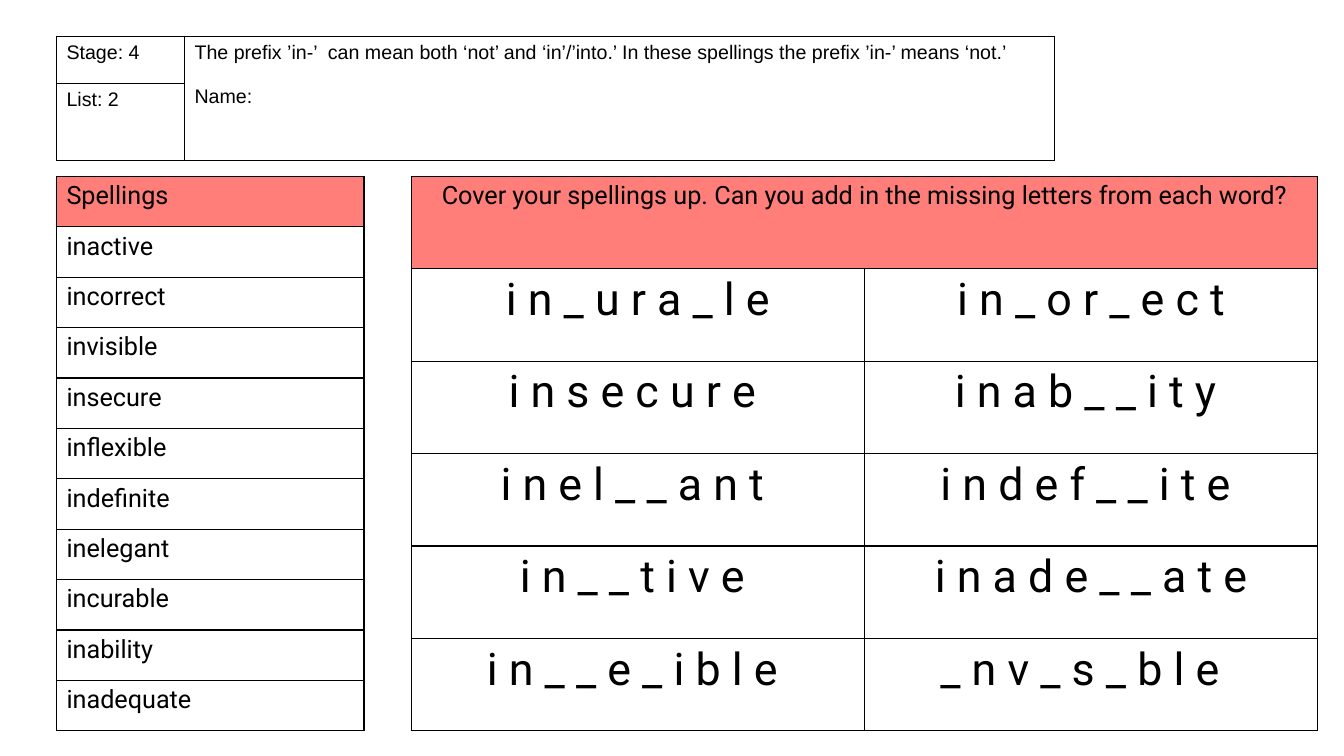
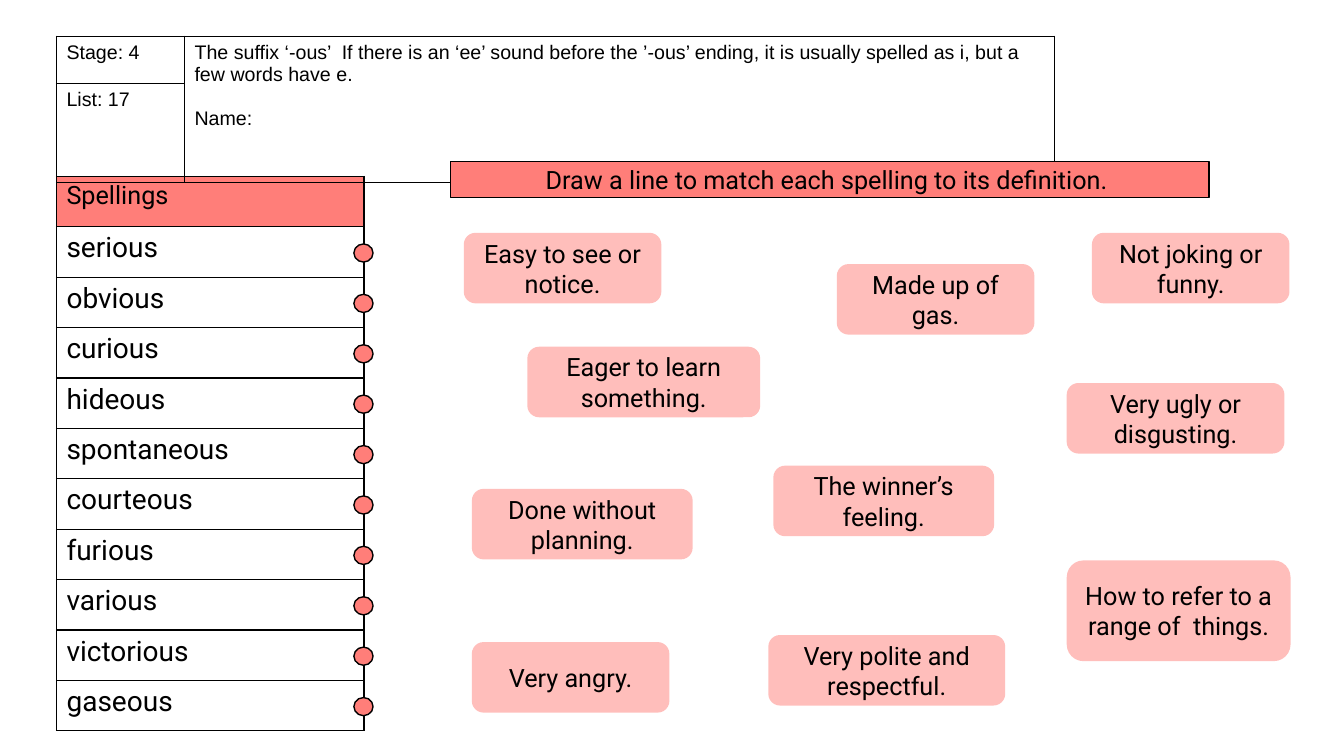
from dataclasses import dataclass
from lxml.etree import SubElement
from pptx import Presentation
from pptx.dml.color import RGBColor as RGB
from pptx.enum.shapes import MSO_SHAPE as Kind
from pptx.enum.text import MSO_ANCHOR as Anchor, PP_ALIGN as Align
from pptx.oxml import parse_xml
from pptx.oxml.ns import nsdecls, qn
from pptx.util import Inches, Pt


@dataclass(frozen=True)
class Theme:
    coral: RGB = RGB(0xFF, 0x7E, 0x79)
    ink: RGB = RGB(0, 0, 0)
    head: str = "Arial"
    body: str = "Roboto"
    small: int = 14
    text: int = 18
    word: int = 20
    large: int = 32
    line: int = 1


theme = Theme()
deck = Presentation()
deck.slide_width, deck.slide_height = Inches(13.33), Inches(7.5)
blank = deck.slide_layouts[6]

# Grid: 15 rows over the slide height, with square units
unit = deck.slide_height / 15
left, top = 1.12, 3.5


def write(frame, lines, size, font=theme.body, align=Align.CENTER):
    """Fill a frame with one paragraph a line, one empty line's height apart."""
    frame.word_wrap = True
    for i, line in enumerate(lines):
        para = frame.add_paragraph() if i else frame.paragraphs[0]
        para.alignment = align
        if i:
            para.space_before = Pt(size * 1.15)
        run = para.add_run()
        run.text = line
        run.font.name, run.font.size = font, Pt(size)
        run.font.color.rgb = theme.ink


def grid(slide, x, y, cols, rows):
    """Add an unfilled table with thin ink borders; sizes are in units."""
    frame = slide.shapes.add_table(len(rows), len(cols), *(
        round(n * unit) for n in (x, y, sum(cols), sum(rows))))
    table = frame.table
    table.first_row = table.horz_banding = False
    for col, width in zip(table.columns, cols):
        col.width = round(width * unit)
    for row, height in zip(table.rows, rows):
        row.height = round(height * unit)
    for cell in table.iter_cells():
        cell.fill.background()
        props = cell._tc.get_or_add_tcPr()
        for i, side in enumerate(("lnL", "lnR", "lnT", "lnB")):
            edge = parse_xml(f'<a:{side} {nsdecls("a")} w="{Pt(theme.line)}">'
                             f'<a:solidFill><a:srgbClr val="{theme.ink}"/>'
                             f'</a:solidFill></a:{side}>')
            props.insert(i, edge)
    return table


# Both slides: spelling list and header table
sheets = [
    ("List: 2", "The prefix ’in-’  can mean both ‘not’ and ‘in’/’into.’ "
     "In these spellings the prefix ’in-’ means ‘not.’", theme.text,
     ["inactive", "incorrect", "invisible", "insecure", "inflexible",
      "indefinite", "inelegant", "incurable", "inability", "inadequate"]),
    ("List: 17", "The suffix ‘-ous’  If there is an ‘ee’ sound before the "
     "’-ous’ ending, it is usually spelled as i, but a few words have e.",
     theme.word,
     ["serious", "obvious", "curious", "hideous", "spontaneous",
      "courteous", "furious", "various", "victorious", "gaseous"]),
]
slides = []
for number, rule, size, words in sheets:
    slide = deck.slides.add_slide(blank)
    slides.append(slide)

    table = grid(slide, left, top, [6.1], [1] * (len(words) + 1))
    for i, word in enumerate(["Spellings"] + words):
        write(table.cell(i, 0).text_frame, [word],
              size if i else theme.text, align=Align.LEFT)
    table.cell(0, 0).fill.solid()
    table.cell(0, 0).fill.fore_color.rgb = theme.coral

    table = grid(slide, left, 0.72, [2.54, 17.26], [0.94, 0.94])
    table.cell(0, 1).merge(table.cell(1, 1))
    for row, col, lines in ((0, 0, ["Stage: 4"]), (1, 0, [number]),
                            (0, 1, [rule, "Name:"])):
        write(table.cell(row, col).text_frame, lines, theme.small,
              theme.head, Align.LEFT)

gaps, match = slides

# Slide 1: words with missing letters
pairs = [
    ("i n _ u r a _ l e", "i n _ o r _ e c t"),
    ("i n s e c u r e ", "i n a b _ _ i t y "),
    ("i n e l _ _ a n t ", "i n d e f _ _ i t e "),
    ("i n _ _ t i v e ", "i n a d e _ _ a t e"),
    ("i n _ _ e _ i b l e ", "_ n v _ s _ b l e  "),
]
table = grid(gaps, 8.16, top, [8.99] * 2, [11 / 6] * 6)
task = table.cell(0, 0)
task.merge(table.cell(0, 1))
task.fill.solid()
task.fill.fore_color.rgb = theme.coral
write(task.text_frame, ["Cover your spellings up. Can you add in the missing "
                        "letters from each word?"], theme.text)
for i, pair in enumerate(pairs, 1):
    for j, word in enumerate(pair):
        write(table.cell(i, j).text_frame, [word], theme.large)

# Slide 2: a dot for each word, definition cards and a task banner
dots = [(Kind.OVAL, 7.02, 4.84 + i, 0.38, 0.36, "") for i in range(10)]
cards = [(Kind.ROUNDED_RECTANGLE, *card) for card in (
    (16.6, 5.24, 3.92, 1.4, "Made up of gas."),
    (15.34, 9.24, 4.38, 1.4, "The winner’s feeling."),
    (21.66, 4.62, 3.92, 1.4, "Not joking or funny."),
    (10.46, 6.88, 4.62, 1.4, "Eager to learn something."),
    (9.36, 9.7, 4.38, 1.4, "Done without planning."),
    (15.24, 12.6, 4.7, 1.4, "Very polite and respectful."),
    (21.16, 7.6, 4.32, 1.4, "Very ugly or disgusting."),
    (9.36, 12.74, 3.92, 1.4, "Very angry."),
    (21.16, 11.12, 4.44, 2, "How to refer to a range of  things."),
    (9.2, 4.62, 3.92, 1.4, "Easy to see or notice."),
)]
banner = (Kind.RECTANGLE, 8.94, 3.2, 15.04, 0.72,
          "Draw a line to match each spelling to its definition. ")
for kind, *box, text in dots + cards + [banner]:
    shape = match.shapes.add_shape(kind, *(round(n * unit) for n in box))
    shape.shadow.inherit = False
    shape.fill.solid()
    shape.fill.fore_color.rgb = theme.coral
    if kind == Kind.ROUNDED_RECTANGLE:
        shape.line.fill.background()
        tint = shape._element.spPr.find(qn("a:solidFill"))[0]
        SubElement(tint, qn("a:alpha")).set("val", "50000")
    else:
        shape.line.color.rgb = theme.ink
        shape.line.width = Pt(theme.line)
    if text:
        shape.text_frame.vertical_anchor = Anchor.MIDDLE
        write(shape.text_frame, [text], theme.text)

deck.save("out.pptx")
